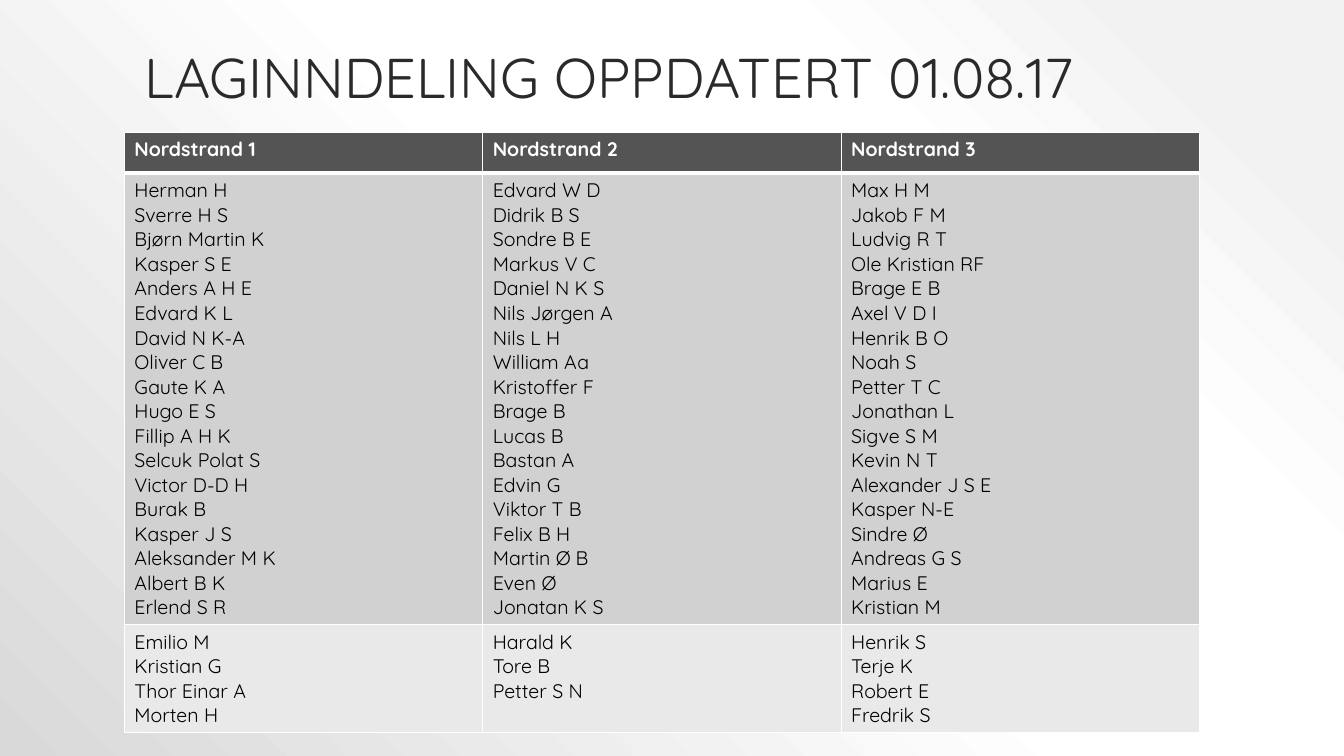
from lxml import etree
from pptx import Presentation
from pptx.dml.color import RGBColor
from pptx.enum.text import MSO_ANCHOR
from pptx.oxml.ns import qn
from pptx.util import Pt

BOTTOM = MSO_ANCHOR.BOTTOM
FONT = "Quicksand"
COLORS = {
    "title": "2A2A2A", "header": "545454", "players": "D1D1D1",
    "coaches": "E9E9E9", "names": "000000", "white": "FFFFFF",
}
BACKDROP_STOPS = [(10, "F2F2F2"), (28, "FFFFFF"), (48, "FFFFFF"), (100, "D9D9D9")]

TITLE = "LAGINNDELING OPPDATERT 01.08.17"
TEAMS = [
    {
        "header": ["Nordstrand 1"],
        "players": [
            "Herman H", "Sverre H S", "Bjørn Martin K", "Kasper S E",
            "Anders A H E", "Edvard K L", "David N K-A", "Oliver C B",
            "Gaute K A", "Hugo E S", "Fillip A H K", "Selcuk Polat S",
            "Victor D-D H", "Burak B", "Kasper J S", "Aleksander M K",
            "Albert B K", "Erlend S R",
        ],
        "coaches": ["Emilio M", "Kristian G", "Thor Einar A", "Morten H"],
    },
    {
        "header": ["Nordstrand 2"],
        "players": [
            "Edvard W D", "Didrik B S", "Sondre B E", "Markus V C",
            "Daniel N K S", "Nils Jørgen A", "Nils L H", "William Aa",
            "Kristoffer F", "Brage B", "Lucas B", "Bastan A",
            "Edvin G", "Viktor T B", "Felix B H", "Martin Ø B",
            "Even Ø", "Jonatan K S",
        ],
        "coaches": ["Harald K", "Tore B", "Petter S N"],
    },
    {
        "header": ["Nordstrand 3"],
        "players": [
            "Max H M", "Jakob F M", "Ludvig R T", "Ole Kristian RF",
            "Brage E B", "Axel V D I", "Henrik B O", "Noah S",
            "Petter T C", "Jonathan L", "Sigve S M", "Kevin N T",
            "Alexander J S E", "Kasper N-E", "Sindre Ø", "Andreas G S",
            "Marius E", "Kristian M",
        ],
        "coaches": ["Henrik S", "Terje K", "Robert E", "Fredrik S"],
    },
]
ROW_HEIGHTS = {"header": 29.2, "players": 322.5, "coaches": 77}
TABLE_LEFT, TABLE_TOP, TABLE_WIDTH = 88.8, 94.5, 768


def paint_backdrop(slide):
    """Fill the background with rings that spread from the top right corner."""
    slide.background.fill.solid()
    solid = slide.element.find(".//" + qn("a:solidFill"))
    gradient = etree.Element(qn("a:gradFill"), rotWithShape="1")
    stops = etree.SubElement(gradient, qn("a:gsLst"))
    for percent, color in BACKDROP_STOPS:
        stop = etree.SubElement(stops, qn("a:gs"), pos=str(percent * 1000))
        etree.SubElement(stop, qn("a:srgbClr"), val=color)
    rings = etree.SubElement(gradient, qn("a:path"), {"path": "circle"})
    etree.SubElement(rings, qn("a:fillToRect"), l="100000", b="100000")
    solid.getparent().replace(solid, gradient)


def add_run(paragraph, text, size, color, bold=False):
    run = paragraph.add_run()
    run.text = text
    run.font.name = FONT
    run.font.size = Pt(size)
    run.font.bold = bold
    run.font.color.rgb = RGBColor.from_string(color)


def add_borders(cell, widths):
    properties = cell._tc.get_or_add_tcPr()
    for side, width in widths.items():
        line = etree.SubElement(properties, qn("a:ln" + side), w=str(Pt(width)))
        fill = etree.SubElement(line, qn("a:solidFill"))
        etree.SubElement(fill, qn("a:srgbClr"), val=COLORS["white"])


def fill_cell(cell, part, lines):
    is_header = part == "header"
    add_borders(cell, {"L": 1, "R": 1, "T": 3 if part == "players" else 1,
                       "B": 3 if is_header else 1})
    cell.fill.solid()
    cell.fill.fore_color.rgb = RGBColor.from_string(COLORS[part])
    text_color = COLORS["white" if is_header else "names"]
    for i, line in enumerate(lines):
        frame = cell.text_frame
        paragraph = frame.add_paragraph() if i else frame.paragraphs[0]
        add_run(paragraph, line, 14, text_color, is_header)


def add_title(slide):
    frame = slide.shapes.add_textbox(Pt(96), Pt(21.6), Pt(768), Pt(61.2)).text_frame
    frame.word_wrap = True
    frame.vertical_anchor = BOTTOM
    frame.paragraphs[0].line_spacing = 0.9
    add_run(frame.paragraphs[0], TITLE, 40, COLORS["title"])


def add_team_table(slide):
    table = slide.shapes.add_table(
        len(ROW_HEIGHTS), len(TEAMS), Pt(TABLE_LEFT), Pt(TABLE_TOP),
        Pt(TABLE_WIDTH), Pt(sum(ROW_HEIGHTS.values()))).table
    for column in table.columns:
        column.width = Pt(TABLE_WIDTH / len(TEAMS))
    for row, (part, height) in enumerate(ROW_HEIGHTS.items()):
        table.rows[row].height = Pt(height)
        for column, team in enumerate(TEAMS):
            fill_cell(table.cell(row, column), part, team[part])


def main():
    deck = Presentation()
    deck.slide_width, deck.slide_height = Pt(960), Pt(540)
    slide = deck.slides.add_slide(deck.slide_layouts[6])
    paint_backdrop(slide)
    add_title(slide)
    add_team_table(slide)
    deck.save("out.pptx")


if __name__ == "__main__":
    main()
